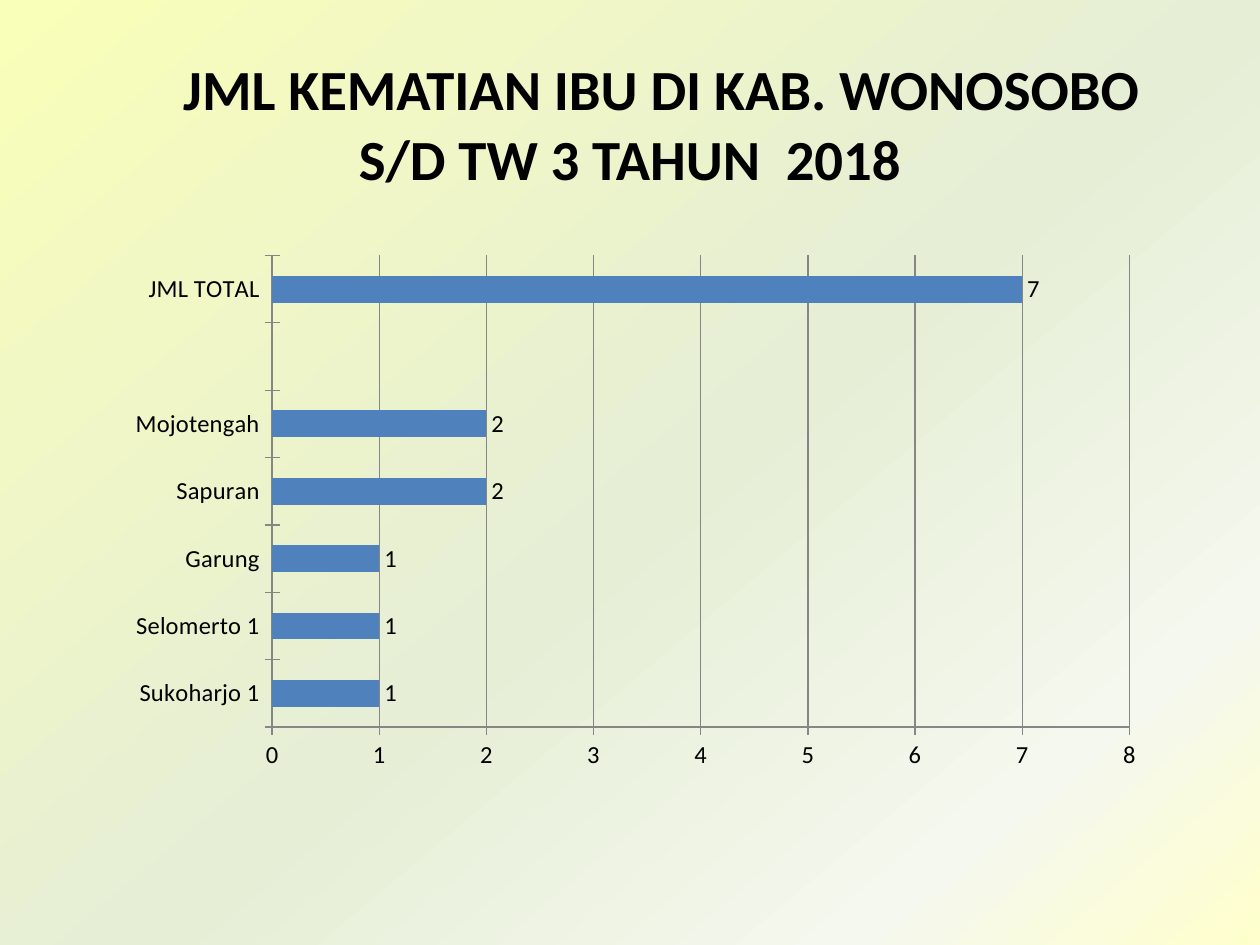
from copy import deepcopy

from pptx import Presentation
from pptx import util as u
from pptx.chart.data import CategoryChartData
from pptx.dml.color import RGBColor
from pptx.enum import chart as ch, text

W, H = 10, 7.5
FONT = "Calibri"
BLACK = RGBColor(0, 0, 0)
GRAY = RGBColor(0x86, 0x86, 0x86)
BLUE = RGBColor(0x4F, 0x81, 0xBD)
BACKGROUND = [
    (0, RGBColor(0xF9, 0xFE, 0xB8)),
    (0.53, RGBColor(0xE6, 0xEE, 0xD6)),
    (0.83, RGBColor(0xF5, 0xF8, 0xEE)),
    (1, RGBColor(0xFF, 0xFF, 0xCC)),
]
DEATHS = {
    "Sukoharjo 1": 1,
    "Selomerto 1": 1,
    "Garung": 1,
    "Sapuran": 2,
    "Mojotengah": 2,
    "": None,
    "JML TOTAL": 7,
}


def box(x, y, w, h):
    """Turn shares of the slide's size into lengths."""
    return [u.Inches(v) for v in (x * W, y * H, w * W, h * H)]


def set_format(obj, values):
    for name, value in values.items():
        setattr(obj, name, value)


def set_font(font, size, bold=False):
    set_format(font, {"name": FONT, "size": u.Pt(size), "bold": bold})
    font.color.rgb = BLACK


def set_line(line):
    line.color.rgb = GRAY
    line.width = u.Pt(0.75)


def fill_background(s):
    fill = s.background.fill
    fill.gradient()
    fill.gradient_angle = 360 - 50
    stop_list = s.element.xpath(".//a:gsLst")[0]
    while len(stop_list) < len(BACKGROUND):
        stop_list.append(deepcopy(stop_list[0]))
    for stop, (position, color) in zip(fill.gradient_stops, BACKGROUND):
        stop.position = position
        stop.color.rgb = color


def add_title(s, runs):
    tf = s.shapes.add_textbox(*box(0.05, 0.04, 0.9, 1 / 6)).text_frame
    set_format(tf, {"word_wrap": True, "vertical_anchor": text.MSO_ANCHOR.MIDDLE})
    p = tf.paragraphs[0]
    p.alignment = text.PP_ALIGN.CENTER
    for content, size, bold in runs:
        r = p.add_run()
        r.text = content
        set_font(r.font, size, bold)


def add_bar_chart(s):
    data = CategoryChartData()
    data.categories = list(DEATHS)
    data.add_series("Series 1", list(DEATHS.values()))
    chart = s.shapes.add_chart(
        ch.XL_CHART_TYPE.BAR_CLUSTERED, *box(0.091, 0.259, 0.827, 0.567), data
    ).chart
    set_format(chart, {"has_legend": False, "has_title": False})
    set_font(chart.font, 10)

    for axis in (chart.category_axis, chart.value_axis):
        axis.major_tick_mark = ch.XL_TICK_MARK.CROSS
        set_font(axis.tick_labels.font, 14)
        set_line(axis.format.line)
    axis_format = {"minimum_scale": 0, "maximum_scale": 8, "major_unit": 1,
                   "has_major_gridlines": True}
    set_format(chart.value_axis, axis_format)
    set_line(chart.value_axis.major_gridlines.format.line)

    plot = chart.plots[0]
    set_format(plot, {"gap_width": 150, "vary_by_categories": False,
                      "has_data_labels": True})
    labels = plot.data_labels
    set_format(labels, {"show_value": True,
                        "position": ch.XL_LABEL_POSITION.OUTSIDE_END})
    set_font(labels.font, 14)
    fill = plot.series[0].format.fill
    fill.solid()
    fill.fore_color.rgb = BLUE


def main():
    prs = Presentation()
    set_format(prs, {"slide_width": u.Inches(W), "slide_height": u.Inches(H)})
    s = prs.slides.add_slide(prs.slide_layouts[6])
    fill_background(s)
    add_title(s, [
        ("\t", 39.6, False),
        ("JML KEMATIAN IBU DI KAB. WONOSOBO S/D TW 3 TAHUN  2018", 32.4, True),
    ])
    add_bar_chart(s)
    prs.save("out.pptx")


if __name__ == "__main__":
    main()
